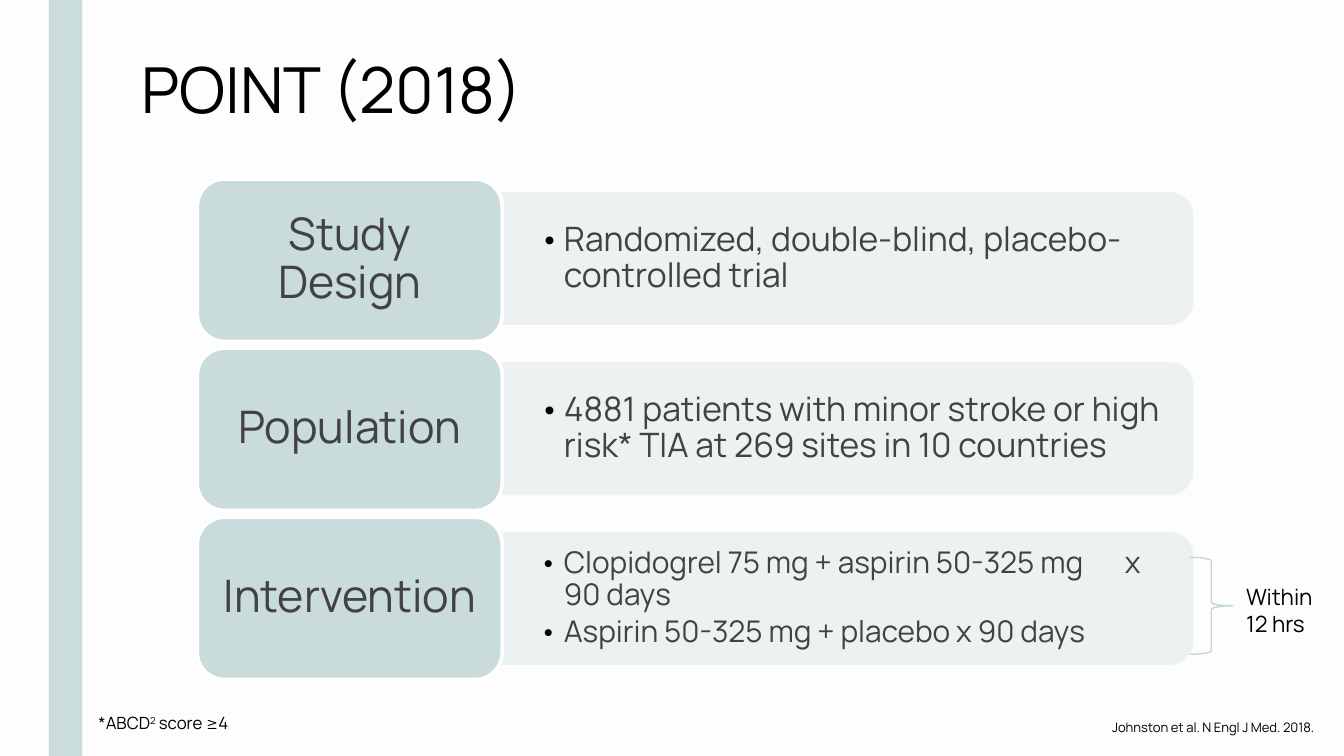
from lxml import etree
from pptx import Presentation
from pptx.dml.color import RGBColor
from pptx.enum.shapes import MSO_SHAPE as Shape
from pptx.enum.text import MSO_ANCHOR as Anchor, PP_ALIGN as Align
from pptx.oxml.ns import qn
from pptx.util import Pt

COLORS = {
    "background": "FDFDFD", "bar": "CADCDC", "label": "CADBDB", "panel": "EBF1F1",
    "brace": "C4D6D6", "white": "FFFFFF", "black": "000000", "body": "424242",
}


def rgb(name):
    return RGBColor.from_string(COLORS[name])


class SlideBuilder:
    font = "Manrope"
    corner = 0.167

    def __init__(self, slide):
        self.slide = slide
        slide.background.fill.solid()
        slide.background.fill.fore_color.rgb = rgb("background")

    def shape(self, kind, left, top, width, height, fill=None, line=None,
              weight=2, adjustments=()):
        shape = self.slide.shapes.add_shape(
            kind, Pt(left), Pt(top), Pt(width), Pt(height))
        shape.shadow.inherit = False
        for index, value in enumerate(adjustments):
            shape.adjustments[index] = value
        if fill:
            shape.fill.solid()
            shape.fill.fore_color.rgb = rgb(fill)
        else:
            shape.fill.background()
        if line:
            shape.line.color.rgb = rgb(line)
            shape.line.width = Pt(weight)
        else:
            shape.line.fill.background()
        return shape

    def style(self, paragraph, size, color, align=Align.LEFT):
        paragraph.alignment = align
        for run in paragraph.runs:
            run.font.name = self.font
            run.font.size = Pt(size)
            run.font.color.rgb = rgb(color)

    def frame(self, shape, inset_x=7.2, inset_y=3.6, anchor=Anchor.TOP):
        frame = shape.text_frame
        frame.word_wrap = True
        frame.vertical_anchor = anchor
        frame.margin_left = frame.margin_right = Pt(inset_x)
        frame.margin_top = frame.margin_bottom = Pt(inset_y)
        return frame

    def text(self, text, left, top, width, height, size, align=Align.LEFT):
        box = self.slide.shapes.add_textbox(Pt(left), Pt(top), Pt(width), Pt(height))
        frame = self.frame(box)
        frame.text = text
        self.style(frame.paragraphs[0], size, "black", align)
        return frame.paragraphs[0]

    def label(self, text, middle):
        width, height = 163.4, 87
        shape = self.shape(Shape.ROUNDED_RECTANGLE, 105.7, middle - height / 2,
                           width, height, "label", "white", adjustments=[self.corner])
        # The rounded corners already add about 4 pt to each inset
        frame = self.frame(shape, 6.5, 3.6, Anchor.MIDDLE)
        frame.text = text
        frame.paragraphs[0].line_spacing = 0.9
        self.style(frame.paragraphs[0], 24, "body", Align.CENTER)

    def panel(self, middle):
        # Turned a quarter so that the two rounded corners face right
        width, height, center = 69.2, 369.4, 453.6
        shape = self.shape(Shape.ROUND_2_SAME_RECTANGLE, center - width / 2,
                           middle - height / 2, width, height, "panel", "panel",
                           adjustments=[self.corner, 0])
        shape.rotation = 90
        for color in shape.element.spPr.iter(qn("a:srgbClr")):
            etree.SubElement(color, qn("a:alpha")).set("val", "89000")

    def bullets(self, items, middle, width, size):
        height = 62.6
        box = self.slide.shapes.add_textbox(
            Pt(269.4), Pt(middle - height / 2), Pt(width), Pt(height))
        frame = self.frame(box, 19.2, 10, Anchor.MIDDLE)
        for index, item in enumerate(items):
            paragraph = frame.add_paragraph() if index else frame.paragraphs[0]
            paragraph.text = item
            self.add_bullet(paragraph)
            paragraph.line_spacing = 0.9
            if index:
                paragraph.space_before = Pt(2.4)
            self.style(paragraph, size, "body")

    def add_bullet(self, paragraph):
        properties = paragraph._p.get_or_add_pPr()
        properties.set("marL", str(Pt(13.5)))
        properties.set("indent", str(-Pt(13.5)))
        bullet_color = etree.SubElement(properties, qn("a:buClr"))
        etree.SubElement(bullet_color, qn("a:srgbClr")).set("val", COLORS["black"])
        etree.SubElement(properties, qn("a:buFont")).set("typeface", self.font)
        etree.SubElement(properties, qn("a:buChar")).set("char", "•")
        if "\t" in paragraph.text:
            tabs = etree.SubElement(properties, qn("a:tabLst"))
            tab = etree.SubElement(tabs, qn("a:tab"))
            tab.set("pos", str(Pt(314)))
            tab.set("algn", "l")


ROWS = [
    ("Study Design", 366, 18, ["Randomized, double-blind, placebo-controlled trial"]),
    ("Population", 373, 18, ["4881 patients with minor stroke or high risk* TIA "
                             "at 269 sites in 10 countries"]),
    ("Intervention", 366, 16, ["Clopidogrel 75 mg + aspirin 50-325 mg\tx 90 days",
                               "Aspirin 50-325 mg + placebo x 90 days"]),
]


def main():
    presentation = Presentation()
    presentation.slide_width, presentation.slide_height = Pt(720), Pt(405)
    builder = SlideBuilder(presentation.slides.add_slide(presentation.slide_layouts[6]))

    # Side bar and title
    builder.shape(Shape.RECTANGLE, 26.2, 0, 17.8, 405, "bar")
    builder.text("POINT (2018)", 68.8, 23.3, 508, 48, 34)

    # Study rows: panel, bullets, label
    for index, (label, width, size, items) in enumerate(ROWS):
        panel_middle = 138.5 + 91.1 * index
        builder.panel(panel_middle)
        builder.bullets(items, panel_middle, width, size)
        builder.label(label, 139.4 + 90.6 * index)

    # Citation
    builder.text("Johnston et al. N Engl J Med. 2018.", 408.8, 381.9, 302.4, 16, 7,
                 Align.RIGHT)

    # Time window for the intervention
    builder.shape(Shape.RIGHT_BRACE, 637.4, 298.6, 23, 52, line="brace", weight=0.75,
                  adjustments=[0.083, 0.5])
    builder.text("Within 12 hrs", 660.5, 309, 52, 36, 12)

    # Footnote with superscript
    footnote = builder.text("*ABCD", 45.7, 378.4, 302.4, 26.6, 9)
    exponent = footnote.add_run()
    exponent.text = "2"
    exponent._r.get_or_add_rPr().set("baseline", "30000")
    footnote.add_run().text = " score ≥4"
    builder.style(footnote, 9, "black")

    presentation.save("out.pptx")


if __name__ == "__main__":
    main()
